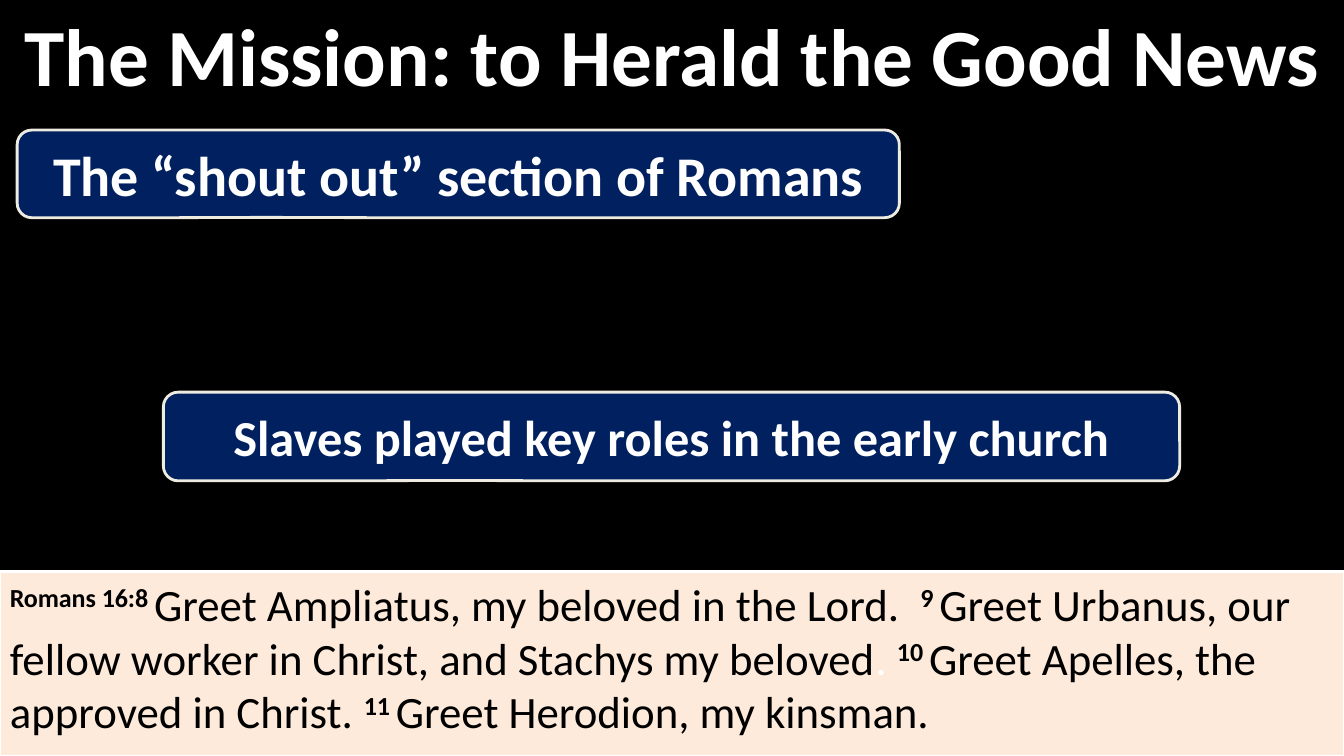
import pptx
import pptx.util
import pptx.dml.color
import pptx.enum.shapes
import pptx.enum.text

Inches, Pt = pptx.util.Inches, pptx.util.Pt
RGBColor = pptx.dml.color.RGBColor
MSO_SHAPE = pptx.enum.shapes.MSO_SHAPE
MSO_ANCHOR = pptx.enum.text.MSO_ANCHOR
PP_ALIGN = pptx.enum.text.PP_ALIGN

BLACK = RGBColor(0x00, 0x00, 0x00)
WHITE = RGBColor(0xFF, 0xFF, 0xFF)
NAVY = RGBColor(0x00, 0x20, 0x60)
CREAM = RGBColor(0xEE, 0xEC, 0xE1)
PEACH = RGBColor(0xFD, 0xEA, 0xDA)

# Content
TITLE = "The Mission: to Herald the Good News"
CALLOUTS = [  # text, size, (left, top, width, height)
    ("Slaves played key roles in the early church", 36, (1.62, 3.89, 10.08, 0.88)),
    ("The “shout out” section of Romans", 40, (0.17, 1.29, 8.75, 0.87)),
]
CALLOUT_ADJUSTMENTS = (-0.219, 0.496, 0.167)
PASSAGE = [  # text, style
    ("Romans 16:8 ", "reference"),
    ("Greet Ampliatus, my beloved in the Lord.  ", "verse"),
    ("9 ", "reference"),
    ("Greet Urbanus, our fellow worker in Christ, and Stachys my beloved", "verse"),
    (". ", "faded"),
    ("10 ", "reference"),
    ("Greet Apelles, the approved in Christ. ", "verse"),
    ("11 ", "reference"),
    ("Greet Herodion, my kinsman.", "verse"),
]
SLIDE_W, SLIDE_H = 13.33, 7.5
TITLE_H = 1.08
PASSAGE_H = 1.83


def set_font(p, size, color, bold=None):
    p.font.name = "Calibri"
    p.font.size = Pt(size)
    p.font.color.rgb = color
    p.font.bold = bold


def add_box(slide, kind, box, fill, line, line_width, anchor):
    sp = slide.shapes.add_shape(kind, *map(Inches, box))
    sp.shadow.inherit = False
    sp.fill.solid()
    sp.fill.fore_color.rgb = fill
    sp.line.color.rgb = line
    sp.line.width = Pt(line_width)
    sp.text_frame.word_wrap = True
    sp.text_frame.vertical_anchor = anchor
    return sp


prs = pptx.Presentation()
prs.slide_width, prs.slide_height = Inches(SLIDE_W), Inches(SLIDE_H)
slide = prs.slides.add_slide(prs.slide_layouts[5])
slide.background.fill.solid()
slide.background.fill.fore_color.rgb = BLACK

# Title
title = slide.shapes.title
title.left, title.top = Inches(0), Inches(0)
title.width, title.height = Inches(SLIDE_W), Inches(TITLE_H)
tf = title.text_frame
tf.text = TITLE
tf.auto_size = pptx.enum.text.MSO_AUTO_SIZE.NONE
tf.vertical_anchor = MSO_ANCHOR.MIDDLE
tf.paragraphs[0].alignment = PP_ALIGN.CENTER
set_font(tf.paragraphs[0], 58, WHITE, True)

# Bible passage along the bottom, with raised verse numbers
sp = add_box(slide, MSO_SHAPE.RECTANGLE, (0, SLIDE_H - PASSAGE_H, SLIDE_W, PASSAGE_H),
             PEACH, WHITE, 1.5, MSO_ANCHOR.TOP)
p = sp.text_frame.paragraphs[0]
p.alignment = PP_ALIGN.LEFT
set_font(p, 32, BLACK)
for text, style in PASSAGE:
    r = p.add_run()
    r.text = text
    r.font.color.rgb = WHITE if style == "faded" else BLACK
    if style == "reference":
        r.font.bold = True
        r._r.get_or_add_rPr().set("baseline", "30000")

# Callouts
for text, size, box in CALLOUTS:
    sp = add_box(slide, MSO_SHAPE.ROUNDED_RECTANGULAR_CALLOUT, box,
                 NAVY, CREAM, 2, MSO_ANCHOR.MIDDLE)
    for i, value in enumerate(CALLOUT_ADJUSTMENTS):
        sp.adjustments[i] = value
    p = sp.text_frame.paragraphs[0]
    p.text = text
    p.alignment = PP_ALIGN.CENTER
    set_font(p, size, WHITE, True)

prs.save("out.pptx")
